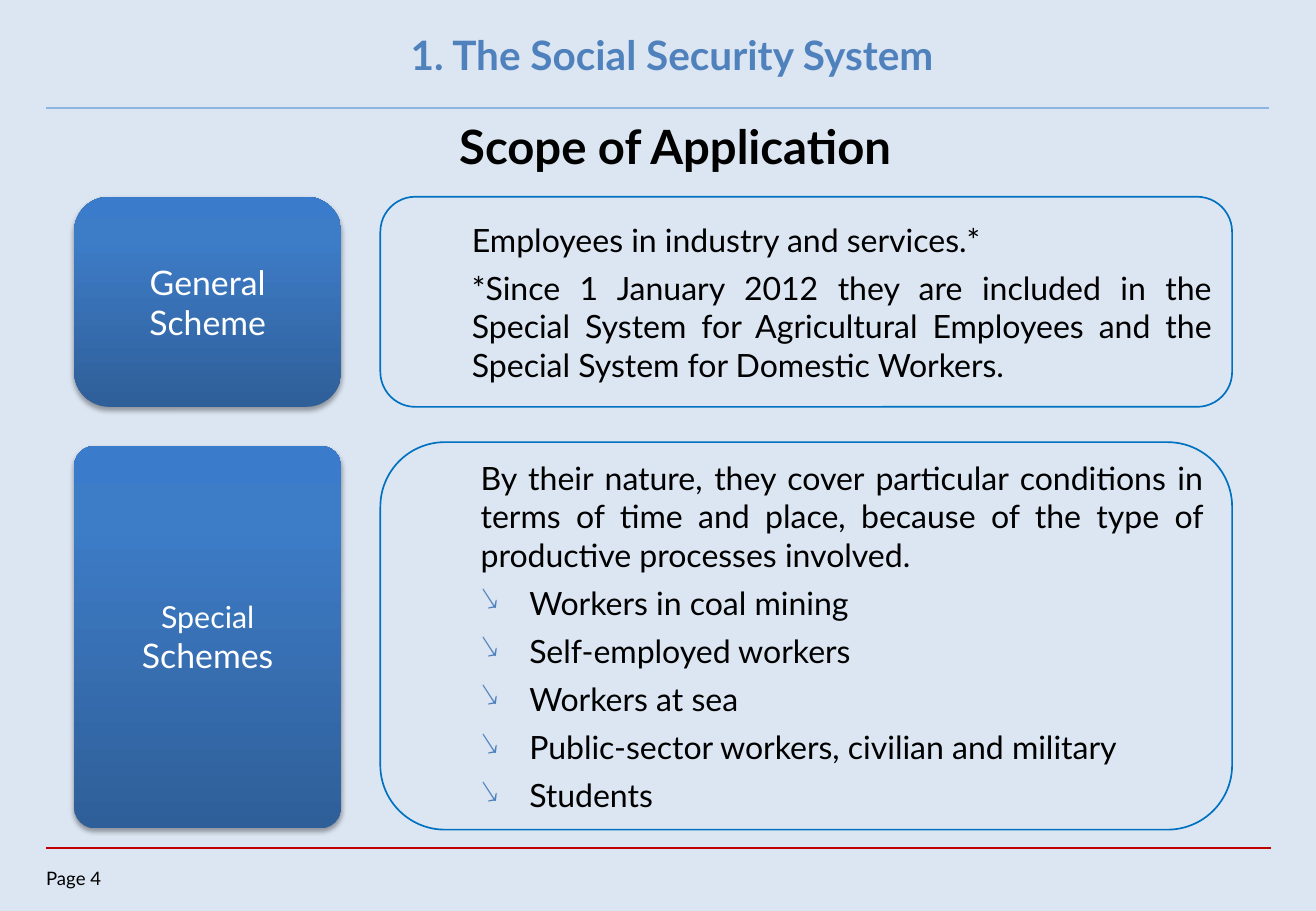
from lxml import etree
from pptx import Presentation, util as u
from pptx.dml.color import RGBColor
from pptx.enum import shapes, text
from pptx.oxml import ns

FONT = "Lato"
PAPER, BLACK, WHITE = "DCE6F2", "000000", "FFFFFF"
ACCENT, OUTLINE = "4F81BD", "0070C0"
GRADIENT = [(0, "2F5F99"), (80, "3D7CC7"), (100, "3A7CCB")]
ROW_LEFT, LABEL_WIDTH, DETAIL_LEFT, DETAIL_WIDTH = 0.61, 2.2, 3.13, 7.01
ROUNDED = shapes.MSO_SHAPE.ROUNDED_RECTANGLE
CENTER, JUSTIFY = text.PP_ALIGN.CENTER, text.PP_ALIGN.JUSTIFY

GENERAL = [
    ("Employees in industry and services.*", False),
    ("*Since 1 January 2012 they are included in the Special System for "
     "Agricultural Employees and the Special System for Domestic Workers.", False),
]
SPECIAL = [
    ("By their nature, they cover particular conditions in terms of time and "
     "place, because of the type of productive processes involved.", False),
    ("Workers in coal mining", True),
    ("Self-employed workers", True),
    ("Workers at sea", True),
    ("Public-sector workers, civilian and military", True),
    ("Students", True),
]


def color(value):
    """Turn a hex string into a colour."""
    return RGBColor.from_string(value)


def add_xml(parent, tag, **attributes):
    """Append a DrawingML element to its parent."""
    return etree.SubElement(parent, ns.qn(tag), attributes)


def inches(box):
    """Convert a box of numbers to lengths."""
    return [u.Inches(value) for value in box]


def set_frame(shape, inset=0.1, **formats):
    """Set wrapping, anchor and insets of a text frame."""
    frame = shape.text_frame
    values = {"word_wrap": True, "vertical_anchor": text.MSO_ANCHOR.MIDDLE}
    values.update({f"margin_{side}": u.Inches(inset)
                   for side in ("left", "right", "top", "bottom")})
    values.update(formats)
    for name, value in values.items():
        setattr(frame, name, value)
    return frame


def add_words(paragraph, words, size, ink, bold=False):
    """Add a formatted run to a paragraph."""
    run = paragraph.add_run()
    run.text = words
    formats = {"name": FONT, "size": u.Pt(size), "bold": bold}
    for name, value in formats.items():
        setattr(run.font, name, value)
    run.font.color.rgb = color(ink)


def set_indent(paragraph, left, hanging=0):
    """Set left margin and first line indent of a paragraph."""
    properties = paragraph._p.get_or_add_pPr()
    properties.set("marL", str(u.Inches(left)))
    properties.set("indent", str(u.Inches(-hanging)))
    return properties


def add_panel(slide, box, corner=0.1667):
    """Add a plain rounded rectangle without shadow."""
    panel = slide.shapes.add_shape(ROUNDED, *inches(box))
    panel.adjustments[0] = corner
    panel.shadow.inherit = False
    panel.fill.background()
    panel.line.fill.background()
    return panel


def add_rule(slide, left, right, top, ink, width):
    """Draw a horizontal rule."""
    rule = slide.shapes.add_connector(
        shapes.MSO_CONNECTOR.STRAIGHT, *inches((left, top, right, top)))
    rule.line.color.rgb = color(ink)
    rule.line.width = u.Pt(width)
    add_xml(rule._element.spPr, "a:effectLst")


def add_header(slide, box):
    """Place the section title, its rule and the slide heading."""
    left, top, width, height = box
    title = slide.shapes.add_textbox(*inches((left, top, width, height)))
    heading = add_panel(slide, (left + 1.67, top + 0.91, 6.52, 0.4), 0.084)
    heading.fill.solid()
    heading.fill.fore_color.rgb = color(PAPER)
    for shape, words, size, ink, indent in (
            (title, "1. The Social Security System", 24, ACCENT, 0.38),
            (heading, "Scope of Application", 28, BLACK, 0.49)):
        paragraph = set_frame(shape).paragraphs[0]
        paragraph.alignment = CENTER
        set_indent(paragraph, indent)
        add_words(paragraph, words, size, ink, True)
    add_rule(slide, left, left + 10.06, top + 0.8, "8EB4E3", 1.5)


def add_label(slide, box, corner, words):
    """Place a shaded scheme name with a soft shadow."""
    label = add_panel(slide, box, corner)
    label.fill.gradient()
    properties = label._element.spPr
    stops = properties.find(".//" + ns.qn("a:gsLst"))
    for stop in list(stops):
        stops.remove(stop)
    for position, shade in GRADIENT:
        stop = add_xml(stops, "a:gs", pos=str(position * 1000))
        add_xml(stop, "a:srgbClr", val=shade)
    properties.find(".//" + ns.qn("a:lin")).set("ang", "16200000")
    shadow = add_xml(properties.find(ns.qn("a:effectLst")), "a:outerShdw",
                     blurRad=str(u.Pt(3.1)), dist=str(u.Pt(1.8)),
                     dir="5400000", rotWithShape="0")
    add_xml(add_xml(shadow, "a:srgbClr", val=BLACK), "a:alpha", val="35000")
    paragraph = set_frame(label, 0.15).paragraphs[0]
    paragraph.alignment = CENTER
    for part, size in words:
        add_words(paragraph, part, size, WHITE)


def add_detail(slide, box, items):
    """Place an outlined panel of statements and arrow bullets."""
    detail = add_panel(slide, box)
    detail.line.color.rgb = color(OUTLINE)
    detail.line.width = u.Pt(1)
    frame = set_frame(detail, 0.08)
    for index, (words, bulleted) in enumerate(items):
        paragraph = frame.add_paragraph() if index else frame.paragraphs[0]
        hanging = 0.4 if bulleted else 0
        properties = set_indent(paragraph, 0.59 + hanging, hanging)
        if bulleted:
            add_xml(add_xml(properties, "a:buClr"), "a:srgbClr", val=ACCENT)
            add_xml(properties, "a:buChar", char="↘")
        formats = {"alignment": JUSTIFY, "space_after": u.Pt(3.8),
                   "space_before": u.Pt(1.9 if index else 0)}
        for name, value in formats.items():
            setattr(paragraph, name, value)
        add_words(paragraph, words, 19, BLACK)


def add_footer(slide, box):
    """Place the closing rule and the page number."""
    left, top, width, height = box
    add_rule(slide, left, left + 10.08, top - 0.16, "C00000", 1)
    page = slide.shapes.add_textbox(*inches(box))
    frame = set_frame(page, 0, vertical_anchor=text.MSO_ANCHOR.TOP)
    add_words(frame.paragraphs[0], "Page 4", 11, BLACK)


def main():
    """Build and save the slide."""
    deck = Presentation()
    deck.slide_width, deck.slide_height = inches((10.83, 7.5))
    slide = deck.slides.add_slide(deck.slide_layouts[6])
    slide.background.fill.solid()
    slide.background.fill.fore_color.rgb = color(PAPER)
    add_header(slide, (0.38, 0.09, 9.92, 0.71))
    schemes = [
        ((1.62, 1.73), 0.1667, [("General Scheme", 20)], (1.62, 1.73), GENERAL),
        ((3.67, 3.15), 0.078, [("Special ", 18), ("Schemes", 20)],
         (3.64, 3.19), SPECIAL),
    ]
    for (top, height), corner, words, (detail_top, detail_height), items in schemes:
        add_label(slide, (ROW_LEFT, top, LABEL_WIDTH, height), corner, words)
        add_detail(slide, (DETAIL_LEFT, detail_top, DETAIL_WIDTH, detail_height), items)
    add_footer(slide, (0.38, 7.14, 0.73, 0.22))
    deck.save("out.pptx")


if __name__ == "__main__":
    main()
